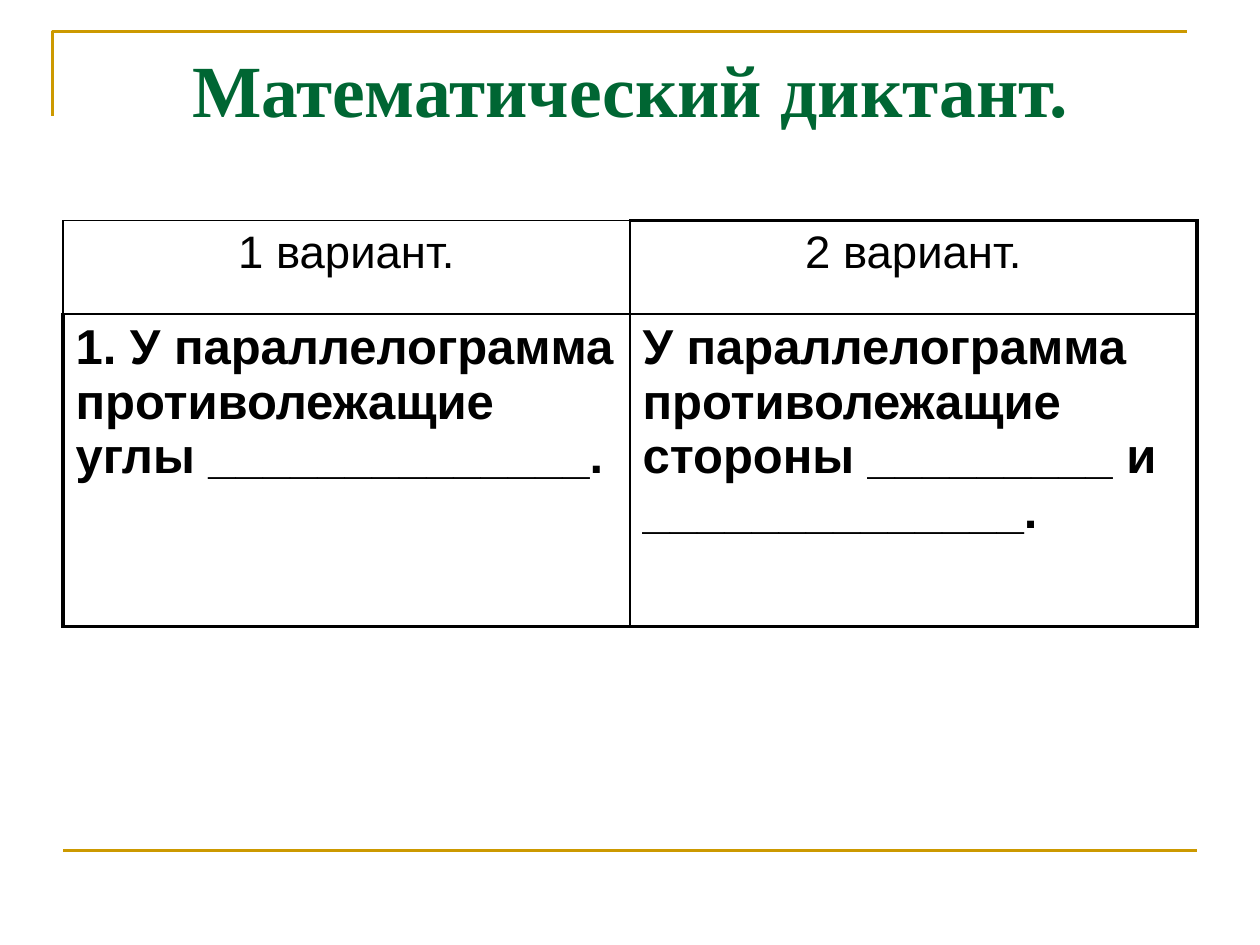
from dataclasses import dataclass
from lxml.etree import SubElement as Sub
from pptx import Presentation
from pptx.dml.color import RGBColor as Rgb
from pptx.enum.shapes import MSO_CONNECTOR as Link
from pptx.enum.text import MSO_ANCHOR as Anchor, PP_ALIGN as Align
from pptx.oxml.ns import qn
from pptx.util import Cm, Pt


@dataclass
class Theme:
    ink: str = "000000"
    green: str = "006633"
    gold: str = "CC9900"
    paper: str = "FFFFFF"
    serif: str = "Times New Roman"
    sans: str = "Arial"
    title: int = 42
    head: int = 26
    body: int = 28
    thin: float = 1
    thick: float = 2.25
    rule: float = 1.5


theme = Theme()


def write(frame, text, size, font=theme.sans, color=theme.ink, bold=False, align=Align.LEFT):
    para = frame.paragraphs[0]
    para.alignment = align
    run = para.add_run()
    run.text = text
    run.font.size = Pt(size)
    run.font.name = font
    run.font.bold = bold
    run.font.color.rgb = Rgb.from_string(color)


def edge(cell, side, width):
    line = Sub(cell._tc.get_or_add_tcPr(), qn(f"a:ln{side}"), w=str(Pt(width)))
    fill = Sub(line, qn("a:solidFill"))
    Sub(fill, qn("a:srgbClr"), val=theme.ink)


deck = Presentation()
deck.slide_width, deck.slide_height = Cm(25.4), Cm(19.05)
slide = deck.slides.add_slide(deck.slide_layouts[5])
shapes = slide.shapes

left, wide = Cm(1.27), Cm(22.86)
title = shapes.title
title.left, title.top, title.width, title.height = left, Cm(0.76), wide, Cm(3.18)
frame = title.text_frame
frame.word_wrap = True
frame.vertical_anchor = Anchor.TOP
write(frame, "Математический диктант.", theme.title, font=theme.serif,
      color=theme.green, bold=True, align=Align.CENTER)

path = shapes.build_freeform(Cm(1.06), Cm(2.33))
path.add_line_segments([(Cm(1.06), Cm(0.63)), (Cm(23.92), Cm(0.63))], close=False)
frame = path.convert_to_shape()
frame.fill.background()
frame.shadow.inherit = False
foot = shapes.add_connector(Link.STRAIGHT, left, Cm(17.15), left + wide, Cm(17.15))
Sub(foot._element.spPr, qn("a:effectLst"))
for item in (frame, foot):
    item.line.color.rgb = Rgb.from_string(theme.gold)
    item.line.width = Pt(theme.rule)

rows = [
    ["1 вариант.", "2 вариант."],
    ["1. У параллелограмма противолежащие углы ______________.",
     "У параллелограмма противолежащие стороны _________ и ______________."],
]
tall = [Cm(1.88), Cm(6.3)]
grid = shapes.add_table(2, 2, left, Cm(4.45), wide, sum(tall)).table
for col in grid.columns:
    col.width = wide // 2

for r, texts in enumerate(rows):
    grid.rows[r].height = tall[r]
    for c, text in enumerate(texts):
        cell = grid.cell(r, c)
        head = r == 0
        write(cell.text_frame, text, theme.head if head else theme.body,
              bold=not head, align=Align.CENTER if head else Align.LEFT)
        bold = {"L": r == 1 and c == 0, "R": c == 1, "T": head and c == 1, "B": r == 1}
        for side, heavy in bold.items():
            edge(cell, side, theme.thick if heavy else theme.thin)
        cell.fill.solid()
        cell.fill.fore_color.rgb = Rgb.from_string(theme.paper)

deck.save("out.pptx")
